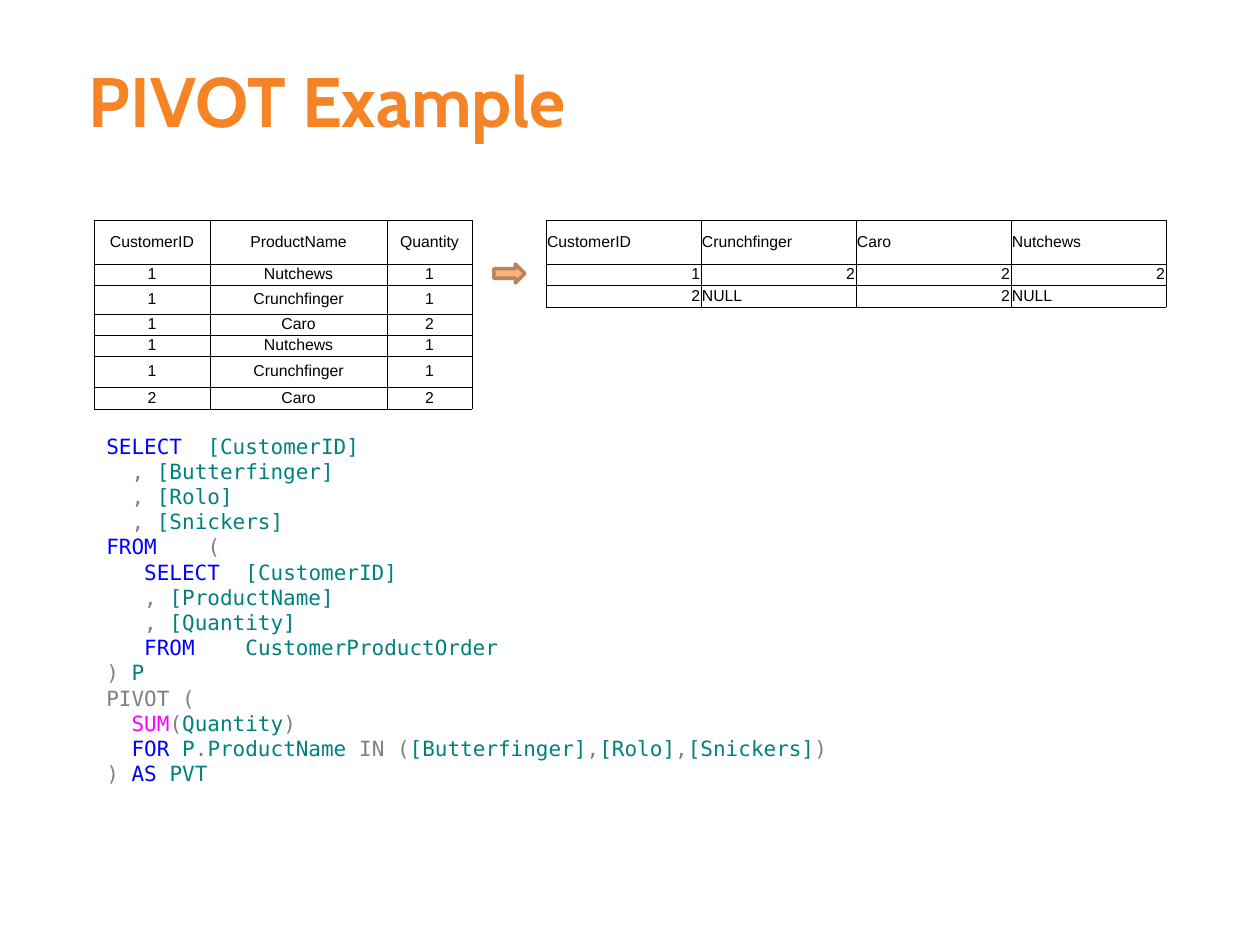
from lxml.etree import SubElement
from pptx import Presentation
from pptx.dml.color import RGBColor
from pptx.enum.shapes import MSO_SHAPE
from pptx.enum.text import MSO_ANCHOR, MSO_AUTO_SIZE, PP_ALIGN
from pptx.oxml.ns import qn
from pptx.util import Emu, Pt

EMU_PER_PX = 914400 / 126
COLORS = {
    "title": "F58427",
    "table": "000000",
    "arrow": "FAB17B",
    "arrow_edge": "B9835B",
    "keyword": "0000FF",
    "name": "008080",
    "symbol": "808080",
    "function": "FF00FF",
}


def px(*lengths):
    return [Emu(round(length * EMU_PER_PX)) for length in lengths]


def add_run(paragraph, text, font_name, size, color):
    run = paragraph.add_run()
    run.text = text
    run.font.name = font_name
    run.font.size = Pt(size)
    run.font.color.rgb = RGBColor.from_string(COLORS[color])
    return run


presentation = Presentation()
presentation.slide_width, presentation.slide_height = px(1260, 945)
slide = presentation.slides.add_slide(presentation.slide_layouts[5])

# Title
title = slide.shapes.title
title.left, title.top, title.width, title.height = px(64, 53, 639, 93)
title_frame = title.text_frame
title_frame.auto_size = MSO_AUTO_SIZE.NONE
title_frame.vertical_anchor = MSO_ANCHOR.MIDDLE
title_frame.margin_left = title_frame.margin_right = 0
heading = title_frame.paragraphs[0]
heading.alignment = PP_ALIGN.LEFT
indent = heading._p.get_or_add_pPr()
indent.set("marL", str(px(25)[0]))
indent.set("indent", "0")
add_run(heading, "PIVOT Example", "Cabin", 40, "title").font.bold = True

# Orders before the pivot and totals after it
CENTER, LEFT, RIGHT = PP_ALIGN.CENTER, PP_ALIGN.LEFT, PP_ALIGN.RIGHT
orders = [
    ["CustomerID", "ProductName", "Quantity"],
    ["1", "Nutchews", "1"],
    ["1", "Crunchfinger", "1"],
    ["1", "Caro", "2"],
    ["1", "Nutchews", "1"],
    ["1", "Crunchfinger", "1"],
    ["2", "Caro", "2"],
]
totals = [
    ["CustomerID", "Crunchfinger", "Caro", "Nutchews"],
    ["1", "2", "2", "2"],
    ["2", "NULL", "2", "NULL"],
]
tables = [
    (orders, 94, [116, 177, 85], [44, 21, 29, 21, 21, 31, 22], CENTER, CENTER),
    (totals, 546, [155] * 4, [44, 21, 22], LEFT, RIGHT),
]
for records, left, widths, heights, text_align, number_align in tables:
    table = slide.shapes.add_table(
        len(heights), len(widths), *px(left, 220, sum(widths), sum(heights))
    ).table
    table.first_row = table.horz_banding = False
    for column, width in zip(table.columns, px(*widths)):
        column.width = width
    for row, height, record in zip(table.rows, px(*heights), records):
        row.height = height
        for cell, value in zip(row.cells, record):
            cell.vertical_anchor = MSO_ANCHOR.MIDDLE
            cell.margin_left, cell.margin_right, cell.margin_top = px(1, 1, 1)
            cell.margin_bottom = px(0 if record is records[0] else 1)[0]
            paragraph = cell.text_frame.paragraphs[0]
            paragraph.alignment = number_align if value.isdigit() else text_align
            add_run(paragraph, value, "Arial", 9, "table")
            properties = cell._tc.get_or_add_tcPr()
            for side in ("a:lnL", "a:lnR", "a:lnT", "a:lnB"):
                border = SubElement(properties, qn(side), w=str(Pt(0.25)))
                border_fill = SubElement(border, qn("a:solidFill"))
                SubElement(border_fill, qn("a:srgbClr"), val=COLORS["table"])
            cell.fill.background()

# Arrow from orders to totals
arrow = slide.shapes.add_shape(MSO_SHAPE.RIGHT_ARROW, *px(494, 264, 31, 19))
arrow.shadow.inherit = False
arrow.fill.solid()
arrow.fill.fore_color.rgb = RGBColor.from_string(COLORS["arrow"])
arrow.line.color.rgb = RGBColor.from_string(COLORS["arrow_edge"])
arrow.line.width = Pt(2)

# Query
query = [
    [("SELECT  ", "keyword"), ("[CustomerID]", "name")],
    [("  , ", "symbol"), ("[Butterfinger]", "name")],
    [("  , ", "symbol"), ("[Rolo]", "name")],
    [("  , ", "symbol"), ("[Snickers]", "name")],
    [("FROM    ", "keyword"), ("(", "symbol")],
    [("   SELECT  ", "keyword"), ("[CustomerID]", "name")],
    [("   , ", "symbol"), ("[ProductName]", "name")],
    [("   , ", "symbol"), ("[Quantity]", "name")],
    [("   FROM    ", "keyword"), ("CustomerProductOrder", "name")],
    [(") ", "symbol"), ("P", "name")],
    [("PIVOT (", "symbol")],
    [("  SUM", "function"), ("(", "symbol"), ("Quantity", "name"), (")", "symbol")],
    [("  FOR ", "keyword"), ("P", "name"), (".", "symbol"),
     ("ProductName ", "name"), ("IN (", "symbol"), ("[Butterfinger]", "name"),
     (",", "symbol"), ("[Rolo]", "name"), (",", "symbol"),
     ("[Snickers]", "name"), (")", "symbol")],
    [(") ", "symbol"), ("AS ", "keyword"), ("PVT", "name")],
]
query_frame = slide.shapes.add_textbox(*px(94, 427, 1071, 369)).text_frame
query_frame.word_wrap = True
query_frame.auto_size = MSO_AUTO_SIZE.SHAPE_TO_FIT_TEXT
for number, tokens in enumerate(query):
    line = query_frame.add_paragraph() if number else query_frame.paragraphs[0]
    for text, kind in tokens:
        add_run(line, text, "DejaVu Sans Mono", 12, kind)

presentation.save("out.pptx")
